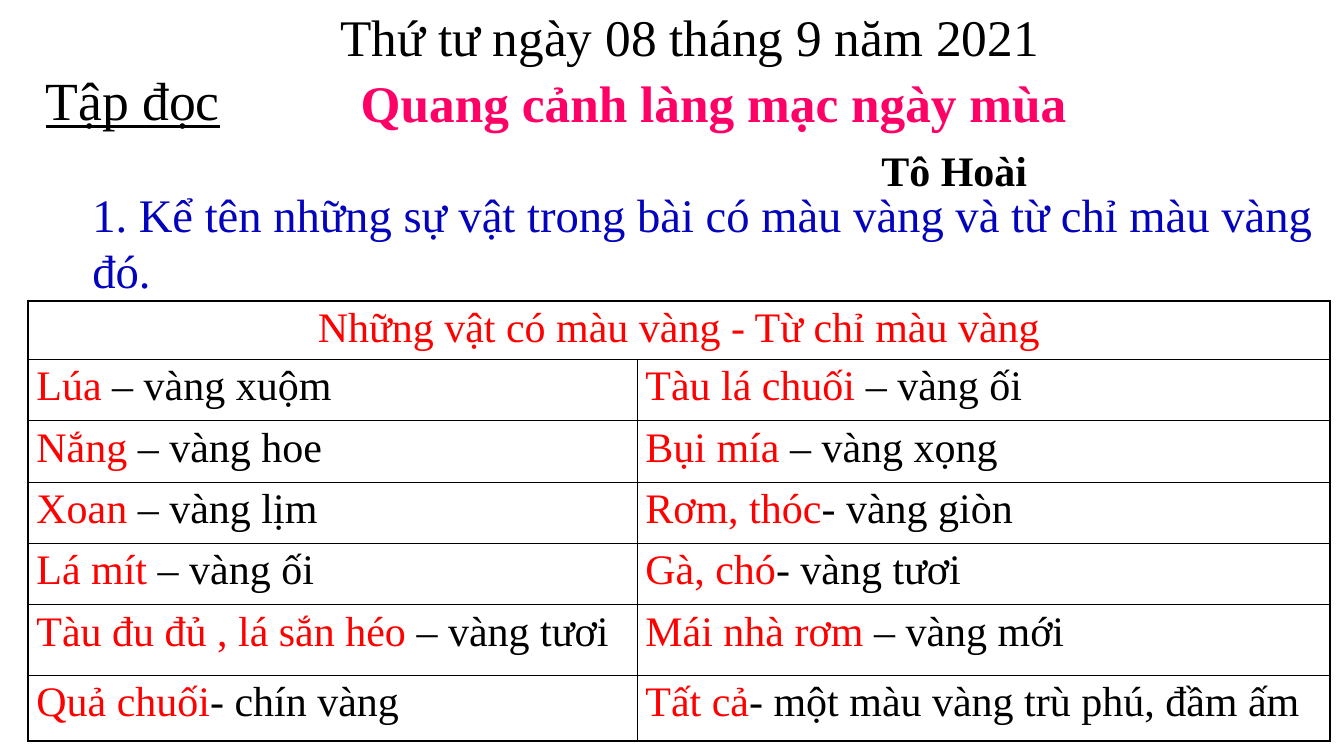
from lxml.etree import SubElement
from pptx import Presentation
from pptx.dml.color import RGBColor
from pptx.enum.text import MSO_ANCHOR, MSO_AUTO_SIZE, PP_ALIGN
from pptx.oxml.ns import qn
from pptx.util import Pt

BLACK, RED, PINK, BLUE = "000000", "FF0000", "FF0066", "0303BD"
HEADING = "Những vật có màu vàng - Từ chỉ màu vàng"
ROWS = [
    [("Lúa", " – vàng xuộm"), ("Tàu lá chuối", " – vàng ối")],
    [("Nắng", " – vàng hoe"), ("Bụi mía", " – vàng xọng")],
    [("Xoan", " – vàng lịm"), ("Rơm, thóc", "- vàng giòn")],
    [("Lá mít", " – vàng ối"), ("Gà, chó", "- vàng tươi")],
    [("Tàu đu đủ , lá sắn héo", " – vàng tươi"), ("Mái nhà rơm", " – vàng mới")],
    [("Quả chuối", "- chín vàng"), ("Tất cả", "- một màu vàng trù phú, đầm ấm")],
]
COLUMN_WIDTHS = [522, 594]
ROW_HEIGHTS = [50] + [52.6] * 4 + [60.5, 56.2]


def color(value):
    return RGBColor.from_string(value)


class Lesson:
    def __init__(self, page, font="Times New Roman"):
        self.page = page
        self.font = font

    def style(self, para, size, ink, align=PP_ALIGN.LEFT, bold=False):
        para.alignment = align
        para.font.name = self.font
        para.font.size = Pt(size)
        para.font.bold = bold
        para.font.color.rgb = color(ink)

    def fill_box(self, box, text, size, ink, align, bold, wrap, margins):
        frame = box.text_frame
        frame.word_wrap = wrap
        frame.auto_size = MSO_AUTO_SIZE.NONE
        frame.vertical_anchor = MSO_ANCHOR.TOP
        frame.margin_left = frame.margin_right = Pt(margins[0])
        frame.margin_top = frame.margin_bottom = Pt(margins[1])
        para = frame.paragraphs[0]
        para.text = text
        para.line_spacing = 1.0
        self.style(para, size, ink, align, bold)
        return para

    def title(self, text, place, size, ink):
        box = self.page.shapes.title
        box.left, box.top, box.width, box.height = map(Pt, place)
        self.fill_box(box, text, size, ink, PP_ALIGN.CENTER, True, True, (8.6, 4.3))

    def text(self, text, place, size, ink=BLACK, align=PP_ALIGN.LEFT,
             bold=False, wrap=True, margins=(8.6, 4.3)):
        box = self.page.shapes.add_textbox(*map(Pt, place))
        return self.fill_box(box, text, size, ink, align, bold, wrap, margins)

    def borders(self, cell, widths):
        properties = cell._tc.get_or_add_tcPr()
        for side, width in zip(("lnL", "lnR", "lnT", "lnB"), widths):
            line = SubElement(properties, qn(f"a:{side}"), w=str(Pt(width)))
            solid = SubElement(line, qn("a:solidFill"))
            SubElement(solid, qn("a:srgbClr"), val=BLACK)
        cell.fill.background()

    def table(self, left, top, heading, rows, size):
        table = self.page.shapes.add_table(
            len(ROW_HEIGHTS), len(COLUMN_WIDTHS), Pt(left), Pt(top),
            Pt(sum(COLUMN_WIDTHS)), Pt(sum(ROW_HEIGHTS))).table
        table.first_row = table.horz_banding = False
        for column, width in zip(table.columns, COLUMN_WIDTHS):
            column.width = Pt(width)
        for row, height in zip(table.rows, ROW_HEIGHTS):
            row.height = Pt(height)
        last_row, last_column = len(ROW_HEIGHTS) - 1, len(COLUMN_WIDTHS) - 1
        for r, row in enumerate(table.rows):
            for c, cell in enumerate(row.cells):
                outer = (c == 0, r == 0 or c == last_column, r == 0, r == last_row)
                self.borders(cell, [2.25 if edge else 1 for edge in outer])
        table.cell(0, 0).merge(table.cell(0, last_column))
        para = table.cell(0, 0).text_frame.paragraphs[0]
        para.text = heading
        self.style(para, size, RED, PP_ALIGN.CENTER)
        for r, row in enumerate(rows, 1):
            for c, (thing, shade) in enumerate(row):
                para = table.cell(r, c).text_frame.paragraphs[0]
                self.style(para, size, BLACK)
                for words, ink in ((thing, RED), (shade, BLACK)):
                    span = para.add_run()
                    span.text = words
                    span.font.color.rgb = color(ink)


def main():
    deck = Presentation()
    deck.slide_width, deck.slide_height = Pt(1152), Pt(648)
    lesson = Lesson(deck.slides.add_slide(deck.slide_layouts[5]))
    subject = lesson.text("Tập đọc", (29, 52.5, 171, 66), 46, wrap=False, margins=(10, 5))
    subject.font.underline = True
    lesson.title("Quang cảnh làng mạc ngày mùa", (276, 57, 672, 60), 44, PINK)
    lesson.text("Tô Hoài", (718, 120, 200, 50), 36, align=PP_ALIGN.CENTER, bold=True)
    lesson.text("1. Kể tên những sự vật trong bài có màu vàng và từ chỉ màu vàng đó.",
                (72, 156, 1062, 104), 40, BLUE, margins=(7.2, 3.6))
    lesson.table(24, 258, HEADING, ROWS, 36)
    lesson.text("Thứ tư ngày 08 tháng 9 năm 2021", (41, 0, 1101, 60), 44,
                align=PP_ALIGN.CENTER)
    deck.save("out.pptx")


if __name__ == "__main__":
    main()
